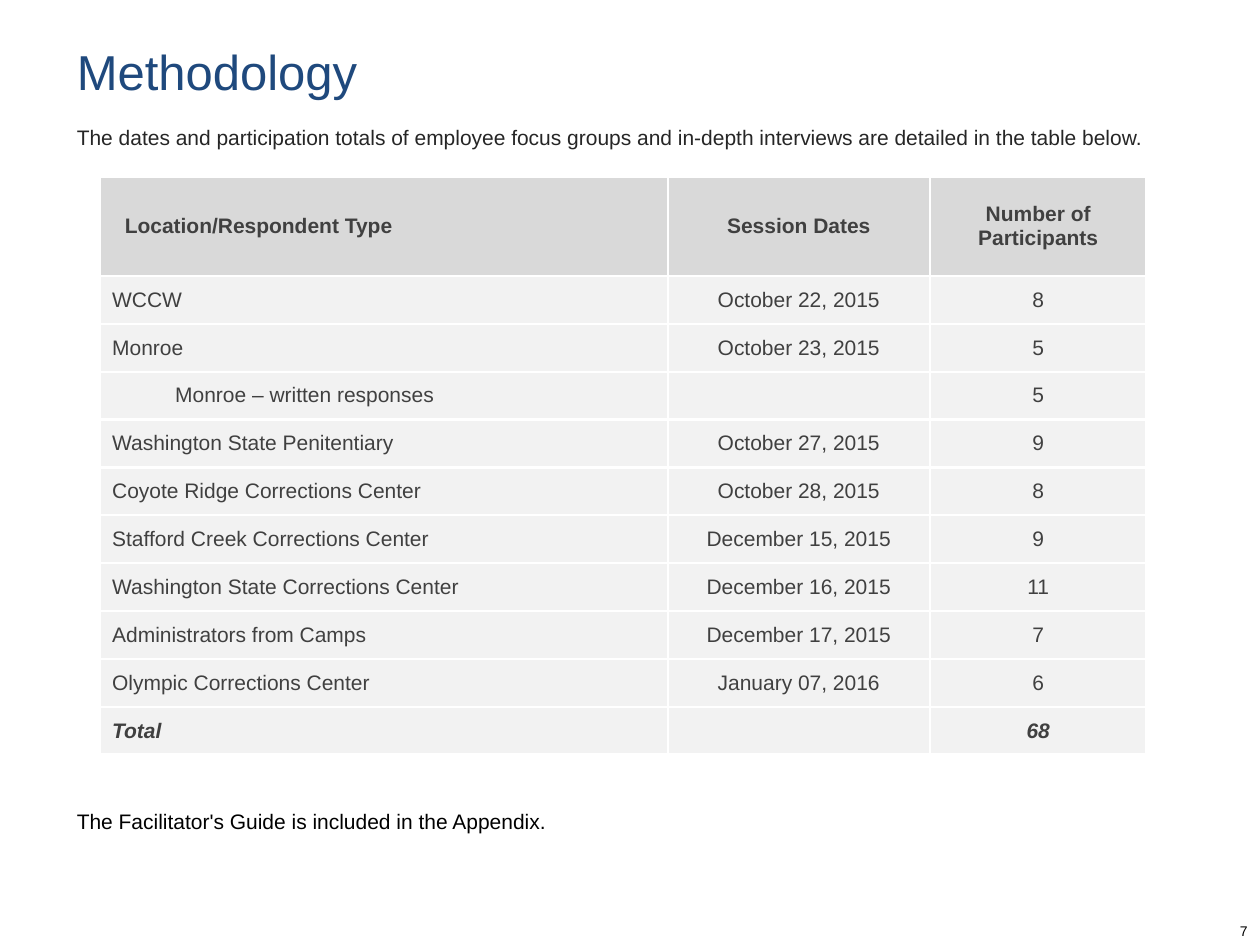
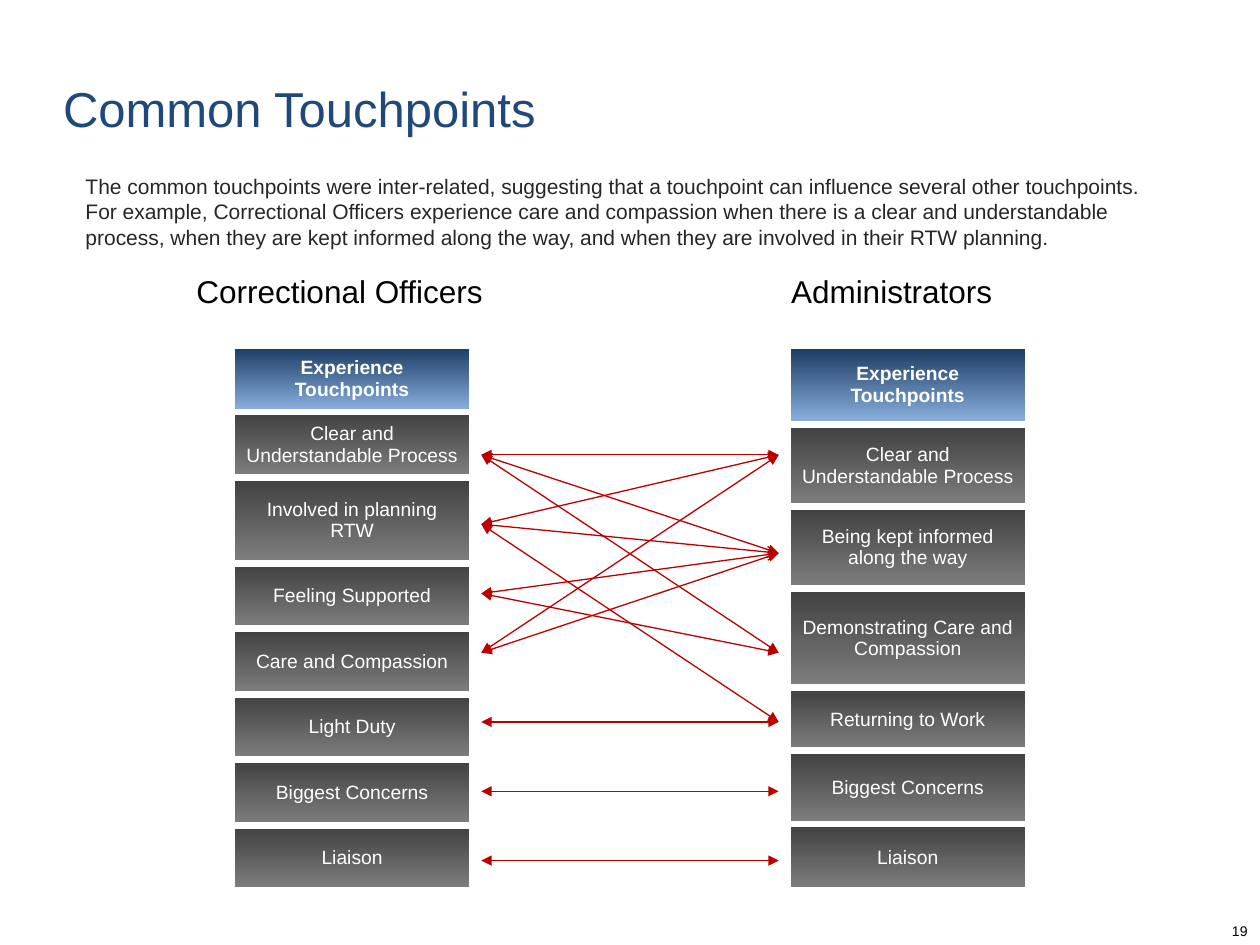
from lxml import etree
from pptx import Presentation
from pptx.dml.color import RGBColor
from pptx.enum import shapes, text
from pptx.oxml import ns
from pptx.util import Inches, Pt

# Shared look
FONT = "Arial"
NAVY, INK, BLACK, WHITE = "1F497D", "262626", "000000", "FFFFFF"
TABLE_INK, HEADER_GREY, ROW_GREY = "404040", "D9D9D9", "F2F2F2"
HEADER_GRADIENT, ROW_GRADIENT = ("17375E", "8EB4E3"), ("404040", "7F7F7F")
ARROW_RED = "BC0000"
LEFT, CENTER, RIGHT, JUSTIFY = (
    text.PP_ALIGN.LEFT, text.PP_ALIGN.CENTER, text.PP_ALIGN.RIGHT, text.PP_ALIGN.JUSTIFY)
NO_MARGINS = {"margin_left": 0, "margin_right": 0, "margin_top": 0, "margin_bottom": 0}

# Slide content
SESSIONS = [
    ("Location/Respondent Type", "Session Dates", "Number of Participants"),
    ("WCCW", "October 22, 2015", "8"),
    ("Monroe", "October 23, 2015", "5"),
    ("Monroe – written responses", "", "5"),
    ("Washington State Penitentiary", "October 27, 2015", "9"),
    ("Coyote Ridge Corrections Center", "October 28, 2015", "8"),
    ("Stafford Creek Corrections Center", "December 15, 2015", "9"),
    ("Washington State Corrections Center", "December 16, 2015", "11"),
    ("Administrators from Camps", "December 17, 2015", "7"),
    ("Olympic Corrections Center", "January 07, 2016", "6"),
    ("Total", "", "68"),
]
SUB_ROW, TOTAL_ROW = 3, len(SESSIONS) - 1

# Touchpoint, row height, height at which its arrows end
OFFICERS = [
    ("Experience Touchpoints", 0.53, None),
    ("Clear and Understandable Process", 0.52, 3.61),
    ("Involved in planning RTW", 0.68, 4.16),
    ("Feeling Supported", 0.52, 4.71),
    ("Care and Compassion", 0.52, 5.18),
    ("Light Duty", 0.52, 5.73),
    ("Biggest Concerns", 0.52, 6.28),
    ("Liaison", 0.52, 6.83),
]
ADMINISTRATORS = [
    ("Experience Touchpoints", 0.63, None),
    ("Clear and Understandable Process", 0.65, 3.61),
    ("Being kept informed along the way", 0.65, 4.39),
    ("Demonstrating Care and Compassion", 0.79, 5.18),
    ("Returning to Work", 0.5, 5.73),
    ("Biggest Concerns", 0.58, 6.28),
    ("Liaison", 0.53, 6.83),
]
# Officer row, administrator row, arrowhead at the administrator end
LINKS = [
    (1, 1, "triangle"), (2, 1, "triangle"), (3, 3, "triangle"), (2, 2, "arrow"),
    (3, 2, "arrow"), (5, 4, "triangle"), (6, 5, "triangle"), (7, 6, "triangle"),
    (2, 4, "triangle"), (1, 2, "triangle"), (1, 3, "triangle"), (4, 1, "triangle"),
    (4, 2, "triangle"),
]


def color(value):
    return RGBColor.from_string(value)


def apply(target, **values):
    for name, value in values.items():
        setattr(target, name, value)


def write(frame, words, size, ink, align=LEFT, spacing=None, **font):
    paragraph = frame.paragraphs[0]
    apply(paragraph, alignment=align, line_spacing=spacing)
    run = paragraph.add_run()
    run.text = words
    apply(run.font, name=FONT, size=Pt(size), **font)
    run.font.color.rgb = color(ink)


def add_text(slide, box, words, size, ink, align=LEFT, spacing=None, **frame_format):
    frame = slide.shapes.add_textbox(*map(Inches, box)).text_frame
    apply(frame, word_wrap=True, **frame_format)
    write(frame, words, size, ink, align, spacing)


def add_slide(presentation, title_words, box):
    slide = presentation.slides.add_slide(presentation.slide_layouts[5])
    title = slide.shapes.title
    apply(title, **dict(zip(("left", "top", "width", "height"), map(Inches, box))))
    apply(title.text_frame, word_wrap=True, vertical_anchor=text.MSO_ANCHOR.BOTTOM,
          auto_size=text.MSO_AUTO_SIZE.NONE, **NO_MARGINS)
    write(title.text_frame, title_words, 28, NAVY)
    return slide


def add_page_number(slide, number):
    add_text(slide, (7.67, 7.27, 2.33, 0.23), number, 8, BLACK, RIGHT)


def add_table(slide, left, top, widths, heights):
    table = slide.shapes.add_table(
        len(heights), len(widths),
        *map(Inches, (left, top, sum(widths), sum(heights)))).table
    apply(table, first_row=False, horz_banding=False)
    for column, width in zip(table.columns, widths):
        column.width = Inches(width)
    for row, height in zip(table.rows, heights):
        row.height = Inches(height)
    return table


def set_borders(cell, side_width, level_width):
    """White borders: left and right, then top and bottom."""
    properties = cell._tc.get_or_add_tcPr()
    widths = (side_width, side_width, level_width, level_width)
    for index, (side, width) in enumerate(zip("LRTB", widths)):
        line = etree.Element(ns.qn(f"a:ln{side}"), w=str(Pt(width)))
        fill = etree.SubElement(line, ns.qn("a:solidFill"))
        etree.SubElement(fill, ns.qn("a:srgbClr"), val=WHITE)
        properties.insert(index, line)


def add_session_table(slide, left, top):
    heights = [0.79] + [0.376] * (len(SESSIONS) - 1)
    heights = [round(height, 2) for height in heights]
    table = add_table(slide, left, top, (4.51, 2.08, 1.72), heights)
    for row, values in enumerate(SESSIONS):
        header, total = row == 0, row == TOTAL_ROW
        for column, words in enumerate(values):
            cell = table.cell(row, column)
            cell.vertical_anchor = text.MSO_ANCHOR.MIDDLE
            if not header:
                apply(cell, **NO_MARGINS)
            if column == 0:
                indent = 0.2 if header else 0.6 if row == SUB_ROW else 0.1
                cell.margin_left = Inches(indent)
            cell.fill.solid()
            cell.fill.fore_color.rgb = color(HEADER_GREY if header else ROW_GREY)
            set_borders(cell, 1.5, 1.5)
            if words:
                write(cell.text_frame, words, 12, TABLE_INK, CENTER if column else LEFT,
                      bold=header or total, italic=total)


def add_touchpoint_column(slide, left, top, touchpoints):
    table = add_table(slide, left, top, [1.89], [height for _, height, _ in touchpoints])
    for row, (words, _, _) in enumerate(touchpoints):
        cell = table.cell(row, 0)
        apply(cell, vertical_anchor=text.MSO_ANCHOR.MIDDLE, margin_top=0, margin_bottom=0)
        cell.fill.gradient()
        cell.fill.gradient_angle = 270
        shades = ROW_GRADIENT if row else HEADER_GRADIENT
        for stop, shade in zip(cell.fill.gradient_stops, shades):
            stop.color.rgb = color(shade)
        set_borders(cell, 3, 4.5)
        write(cell.text_frame, words, 11, WHITE, CENTER, bold=row == 0)


def add_links(slide, left, right):
    for officer, administrator, tail in LINKS:
        ends = (left, OFFICERS[officer][2], right, ADMINISTRATORS[administrator][2])
        connector = slide.shapes.add_connector(
            shapes.MSO_CONNECTOR.STRAIGHT, *map(Inches, ends))
        connector.line.width = Pt(0.75)
        connector.line.color.rgb = color(ARROW_RED)
        line = connector.line._get_or_add_ln()
        etree.SubElement(line, ns.qn("a:headEnd"), type="triangle")
        etree.SubElement(line, ns.qn("a:tailEnd"), type=tail)
        etree.SubElement(connector._element.spPr, ns.qn("a:effectLst"))


def build_methodology(presentation):
    slide = add_slide(presentation, "Methodology", (0.61, 0.26, 8.23, 0.54))
    notes = [
        (0.95, "The dates and participation totals of employee focus groups and in-depth "
               "interviews are detailed in the table below.", INK, JUSTIFY),
        (6.38, "The Facilitator's Guide is included in the Appendix.", BLACK, LEFT),
    ]
    for top, words, ink, align in notes:
        add_text(slide, (0.61, top, 8.74, 0.3), words, 12, ink, align, 1.2, **NO_MARGINS)
    add_session_table(slide, 0.79, 1.4)
    add_page_number(slide, "7")


def build_touchpoints(presentation):
    slide = add_slide(presentation, "Common Touchpoints", (0.5, 0.42, 9, 0.67))
    add_touchpoint_column(slide, 6.26, 2.74, ADMINISTRATORS)
    add_touchpoint_column(slide, 1.85, 2.74, OFFICERS)
    add_text(slide, (1.46, 2.11, 2.52, 0.4), "Correctional Officers", 18, BLACK)
    add_text(slide, (6.18, 2.11, 1.97, 0.4), "Administrators", 18, BLACK)
    add_links(slide, 3.82, 6.18)
    add_text(slide, (0.58, 1.33, 8.75, 0.71),
             "The common touchpoints were inter-related, suggesting that a touchpoint can "
             "influence several other touchpoints. For example, Correctional Officers "
             "experience care and compassion when there is a clear and understandable "
             "process, when they are kept informed along the way, and when they are "
             "involved in their RTW planning.", 12, INK)
    add_page_number(slide, "19")


def main():
    presentation = Presentation()
    apply(presentation, slide_width=Inches(10), slide_height=Inches(7.5))
    build_methodology(presentation)
    build_touchpoints(presentation)
    presentation.save("out.pptx")


if __name__ == "__main__":
    main()
